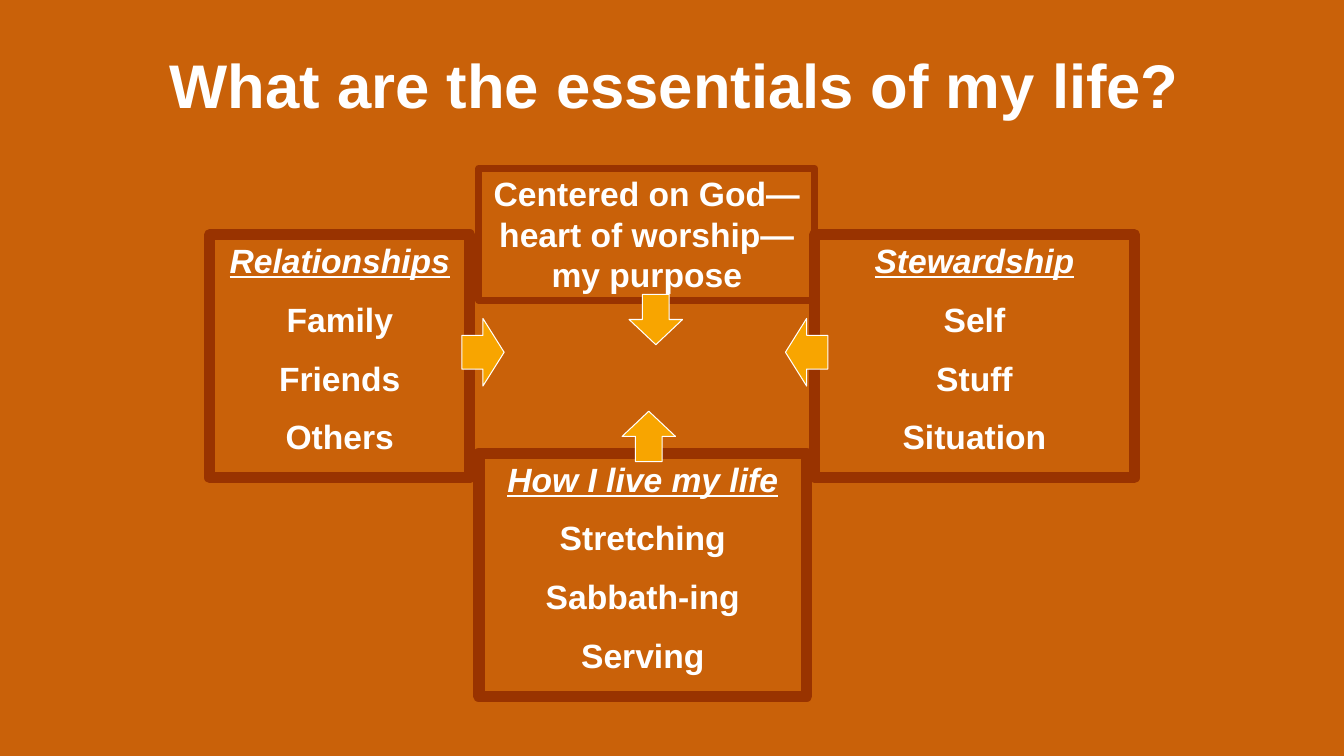
from pptx import Presentation
from pptx.dml.color import RGBColor
from pptx.enum.shapes import MSO_SHAPE
from pptx.enum.text import MSO_ANCHOR, PP_ALIGN
from pptx.util import Inches, Pt

COLORS = {
    "background": "C96109",
    "text": "FFFFFF",
    "frame": "993300",
    "arrow": "F8A500",
}

# Each frame: left, top, width, height, heading, items
ESSENTIALS = [
    (2.08, 2.33, 2.58, 2.41, "Relationships", ["Family", "Friends", "Others"]),
    (4.75, 4.5, 3.25, 2.41, "How I live my life",
     ["Stretching", "Sabbath-ing", "Serving"]),
    (8.08, 2.33, 3.17, 2.41, "Stewardship", ["Self", "Stuff", "Situation"]),
]

# Arrows pointing at the center: direction, left, top, width, height
ARROWS = [
    (MSO_SHAPE.RIGHT_ARROW, 4.58, 3.16, 0.42, 0.67),
    (MSO_SHAPE.LEFT_ARROW, 7.79, 3.16, 0.42, 0.67),
    (MSO_SHAPE.DOWN_ARROW, 6.24, 2.92, 0.53, 0.5),
    (MSO_SHAPE.UP_ARROW, 6.17, 4.08, 0.53, 0.5),
]


def color(name):
    return RGBColor.from_string(COLORS[name])


def write(paragraph, text, size=24, heading=False, space_before=0):
    paragraph.alignment = PP_ALIGN.CENTER
    paragraph.space_before = Pt(space_before)
    run = paragraph.add_run()
    run.text = text
    run.font.name = "Arial"
    run.font.size = Pt(size)
    run.font.bold = True
    run.font.italic = heading
    run.font.underline = heading
    run.font.color.rgb = color("text")


def add_title(slide, text):
    title = slide.shapes.add_textbox(
        Inches(0.54), Inches(0.42), Inches(12.31), Inches(0.83))
    frame = title.text_frame
    frame.word_wrap = True
    frame.vertical_anchor = MSO_ANCHOR.MIDDLE
    write(frame.paragraphs[0], text, size=44)


def add_outlined(slide, kind, place, line_color, line_width):
    shape = slide.shapes.add_shape(kind, *map(Inches, place))
    shape.shadow.inherit = False
    shape.line.color.rgb = color(line_color)
    shape.line.width = Pt(line_width)
    return shape


def add_frame(slide, place, line_width):
    box = add_outlined(slide, MSO_SHAPE.RECTANGLE, place, "frame", line_width)
    box.fill.background()
    box.text_frame.word_wrap = True
    box.text_frame.vertical_anchor = MSO_ANCHOR.TOP
    return box.text_frame


def add_essential(slide, place, heading, items):
    frame = add_frame(slide, place, 8)
    write(frame.paragraphs[0], heading, heading=True)
    for item in items:
        write(frame.add_paragraph(), item, space_before=13.2)


def add_arrow(slide, direction, place):
    arrow = add_outlined(slide, direction, place, "text", 0.75)
    arrow.fill.solid()
    arrow.fill.fore_color.rgb = color("arrow")


def main():
    deck = Presentation()
    deck.slide_width, deck.slide_height = Inches(13.33), Inches(7.5)
    slide = deck.slides.add_slide(deck.slide_layouts[6])
    slide.background.fill.solid()
    slide.background.fill.fore_color.rgb = color("background")

    add_title(slide, "What are the essentials of my life?")

    # Essentials around the center
    for *place, heading, items in ESSENTIALS:
        add_essential(slide, place, heading, items)

    # Purpose above the center
    purpose = add_frame(slide, (4.75, 1.67, 3.33, 1.31), 5)
    write(purpose.paragraphs[0], "Centered on God—heart of worship—my purpose")

    # Arrows toward the center
    for direction, *place in ARROWS:
        add_arrow(slide, direction, place)

    deck.save("out.pptx")


if __name__ == "__main__":
    main()
